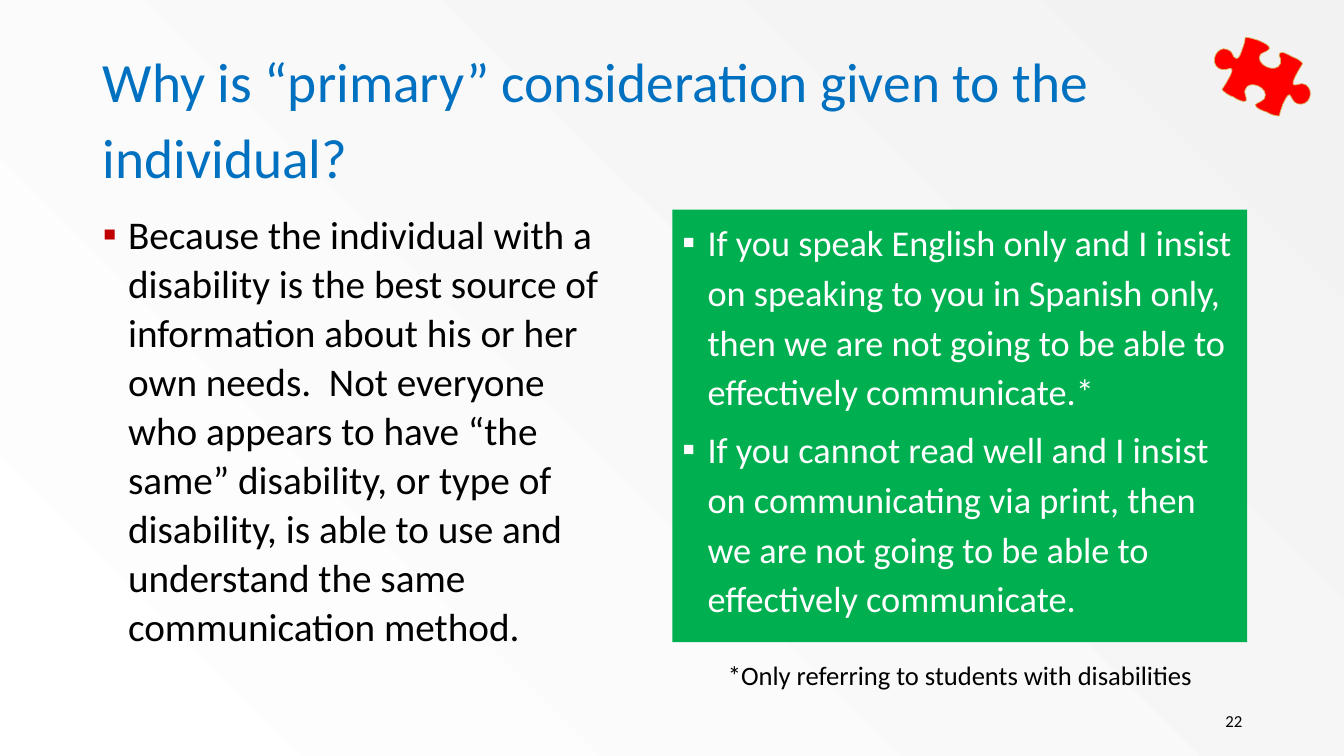
from lxml.etree import SubElement
from pptx import Presentation
from pptx.dml.color import RGBColor
from pptx.enum.shapes import MSO_SHAPE
from pptx.enum.text import MSO_ANCHOR, MSO_AUTO_SIZE, PP_ALIGN
from pptx.oxml.ns import qn
from pptx.util import Inches, Pt

COLORS = {
    "title": "0070C0",
    "text": "000000",
    "bullet": "C00000",
    "panel": "00B050",
    "panel_text": "FFFFFF",
    "puzzle": "FF0000",
    "puzzle_edge": "D8B25C",
    "background_corner": "F2F2F2",
    "background": "FFFFFF",
}
FONT = "Calibri"

TITLE = "Why is “primary” consideration given to the individual?"
REASON = (
    "Because the individual with a disability is the best source of information "
    "about his or her own needs.  Not everyone who appears to have “the same” "
    "disability, or type of disability, is able to use and understand the same "
    "communication method."
)
EXAMPLES = [
    "If you speak English only and I insist on speaking to you in Spanish only, "
    "then we are not going to be able to effectively communicate.*",
    "If you cannot read well and I insist on communicating via print, "
    "then we are not going to be able to effectively communicate.",
]
FOOTNOTE = "*Only referring to students with disabilities"

PUZZLE_START = (12.92, 0.63)
PUZZLE_CURVES = [
    (12.89, 0.68, 12.8, 0.82, 12.83, 0.84),
    (12.85, 0.86, 12.9, 0.81, 12.95, 0.84),
    (13.04, 0.9, 12.99, 1.06, 12.87, 1.03),
    (12.82, 1.02, 12.81, 0.95, 12.79, 0.94),
    (12.77, 0.93, 12.74, 1, 12.72, 1.04),
    (12.71, 1.08, 12.69, 1.12, 12.69, 1.15),
    (12.65, 1.15, 12.61, 1.14, 12.56, 1.11),
    (12.52, 1.1, 12.45, 1.07, 12.45, 1.04),
    (12.46, 1.02, 12.49, 1.02, 12.5, 1.01),
    (12.51, 1, 12.53, 0.99, 12.54, 0.98),
    (12.6, 0.87, 12.38, 0.78, 12.35, 0.89),
    (12.33, 0.91, 12.37, 0.97, 12.36, 1),
    (12.34, 1.02, 12.27, 0.99, 12.23, 0.96),
    (12.19, 0.95, 12.15, 0.92, 12.12, 0.89),
    (12.13, 0.87, 12.16, 0.83, 12.18, 0.79),
    (12.22, 0.72, 12.23, 0.69, 12.21, 0.68),
    (12.2, 0.67, 12.14, 0.71, 12.09, 0.68),
    (11.99, 0.62, 12.07, 0.45, 12.17, 0.49),
    (12.2, 0.5, 12.22, 0.52, 12.22, 0.53),
    (12.23, 0.55, 12.24, 0.58, 12.26, 0.58),
    (12.29, 0.59, 12.31, 0.52, 12.32, 0.49),
    (12.34, 0.44, 12.35, 0.4, 12.35, 0.37),
    (12.39, 0.37, 12.44, 0.39, 12.48, 0.4),
    (12.52, 0.42, 12.6, 0.45, 12.59, 0.48),
    (12.58, 0.51, 12.52, 0.52, 12.5, 0.54),
    (12.44, 0.64, 12.66, 0.74, 12.7, 0.63),
    (12.7, 0.62, 12.7, 0.59, 12.7, 0.58),
    (12.69, 0.57, 12.68, 0.54, 12.69, 0.53),
    (12.71, 0.5, 12.77, 0.54, 12.81, 0.56),
    (12.86, 0.58, 12.9, 0.6, 12.92, 0.63),
]


def color(name):
    return RGBColor.from_string(COLORS[name])


def set_background(slide):
    fill = slide.background.fill
    fill.gradient()
    for stop, name in zip(fill.gradient_stops, ("background_corner", "background")):
        stop.color.rgb = color(name)
    gradient = slide.background._cSld.find(".//" + qn("a:gradFill"))
    linear = gradient.find(qn("a:lin"))
    if linear is not None:
        gradient.remove(linear)
    circle = SubElement(gradient, qn("a:path"), path="circle")
    SubElement(circle, qn("a:fillToRect"), l="100000", b="100000")


def place(shape, left, top, width, height):
    shape.left, shape.top = Inches(left), Inches(top)
    shape.width, shape.height = Inches(width), Inches(height)


def write(shape, texts, size, color_name, align=PP_ALIGN.LEFT,
          anchor=MSO_ANCHOR.TOP, spacing=1.0, before=0, bullet=None):
    frame = shape.text_frame
    frame.text = "\n".join(texts)
    frame.word_wrap = True
    frame.auto_size = MSO_AUTO_SIZE.NONE
    frame.vertical_anchor = anchor
    for paragraph in frame.paragraphs:
        paragraph.alignment = align
        paragraph.line_spacing = spacing
        paragraph.space_before = Pt(before)
        paragraph.font.name = FONT
        paragraph.font.size = Pt(size)
        paragraph.font.color.rgb = color(color_name)
        if bullet:
            add_bullet(paragraph, bullet)


def add_bullet(paragraph, color_name):
    properties = paragraph._p.get_or_add_pPr()
    indent = Inches(0.25)
    properties.set("marL", str(indent))
    properties.set("indent", str(-indent))
    bullet_color = SubElement(properties, qn("a:buClr"))
    SubElement(bullet_color, qn("a:srgbClr"), val=COLORS[color_name])
    SubElement(properties, qn("a:buFont"), typeface=FONT)
    SubElement(properties, qn("a:buChar"), char="▪")
    default_run = properties.find(qn("a:defRPr"))
    if default_run is not None:
        properties.append(default_run)


def add_label(slide, box, text, size, align, anchor=MSO_ANCHOR.TOP):
    label = slide.shapes.add_textbox(*map(Inches, box))
    write(label, [text], size, "text", align, anchor)


def add_panel(slide):
    box = map(Inches, (6.67, 2.08, 5.7, 4.29))
    panel = slide.shapes.add_shape(MSO_SHAPE.RECTANGLE, *box)
    panel.shadow.inherit = False
    panel.fill.solid()
    panel.fill.fore_color.rgb = color("panel")
    panel.line.fill.background()
    write(panel, EXAMPLES, 25.9, "panel_text", spacing=1.14, before=6,
          bullet="panel_text")


def bend_lines(shape):
    lines = list(shape._element.iter(qn("a:lnTo")))
    outline = lines[0].getparent()
    for first, second, third in zip(lines[::3], lines[1::3], lines[2::3]):
        curve = SubElement(outline, qn("a:cubicBezTo"))
        first.addprevious(curve)
        for line in (first, second, third):
            curve.append(line[0])
            outline.remove(line)


def add_puzzle_piece(slide):
    points = [
        (Inches(x), Inches(y))
        for curve in PUZZLE_CURVES
        for x, y in zip(curve[::2], curve[1::2])
    ]
    builder = slide.shapes.build_freeform(*map(Inches, PUZZLE_START))
    builder.add_line_segments(points, close=True)
    piece = builder.convert_to_shape()
    bend_lines(piece)
    piece.shadow.inherit = False
    piece.fill.solid()
    piece.fill.fore_color.rgb = color("puzzle")
    piece.line.color.rgb = color("puzzle_edge")
    piece.line.width = Pt(0.5)


def main():
    presentation = Presentation()
    presentation.slide_width = Inches(13.33)
    presentation.slide_height = Inches(7.5)
    slide = presentation.slides.add_slide(presentation.slide_layouts[1])
    set_background(slide)

    title, body = slide.placeholders
    place(title, 0.92, 0.4, 11.5, 1.45)
    write(title, [TITLE], 39.6, "title", anchor=MSO_ANCHOR.MIDDLE, spacing=1.14)
    place(body, 0.92, 2.02, 5.24, 4.76)
    write(body, [REASON], 28, "text", spacing=1.04, bullet="bullet")

    add_panel(slide)
    add_label(slide, (9.42, 6.95, 3, 0.4), "22", 12, PP_ALIGN.RIGHT,
              MSO_ANCHOR.MIDDLE)
    add_label(slide, (6.67, 6.49, 5.7, 0.42), FOOTNOTE, 19, PP_ALIGN.CENTER)
    add_puzzle_piece(slide)
    presentation.save("out.pptx")


if __name__ == "__main__":
    main()
